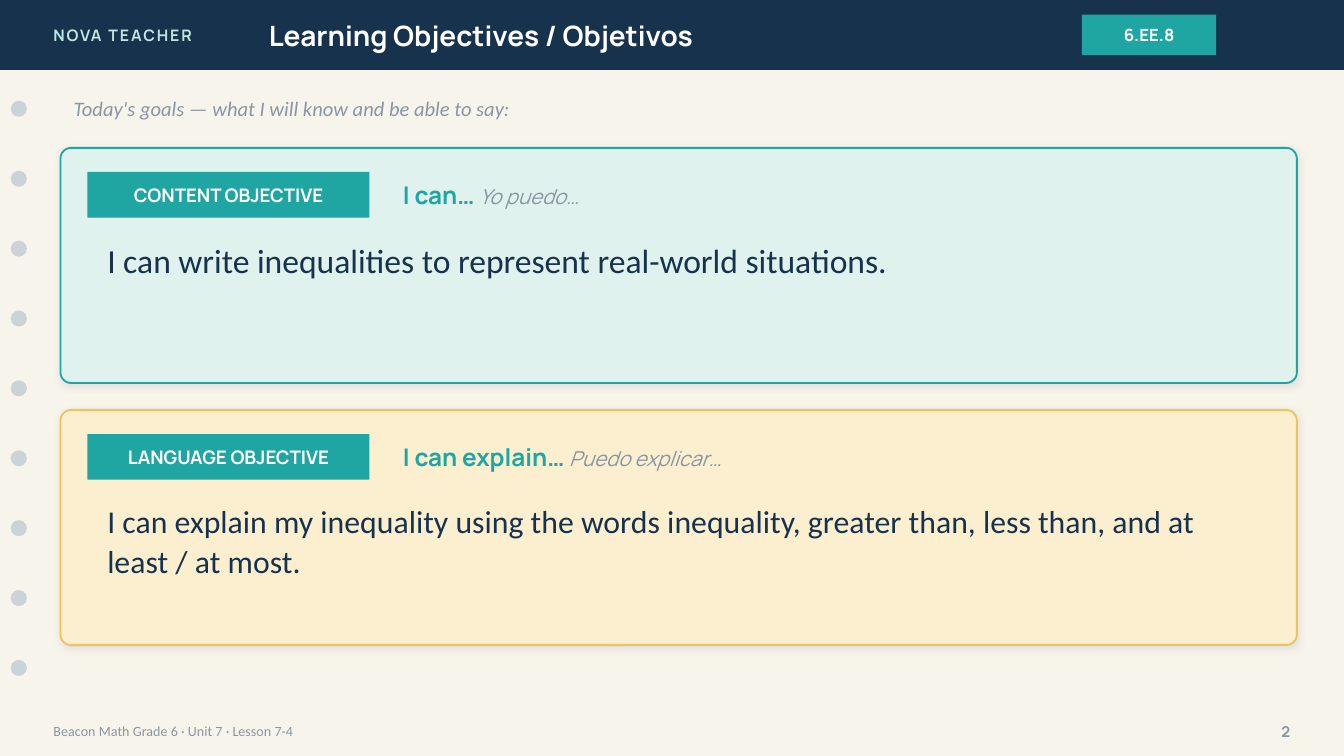
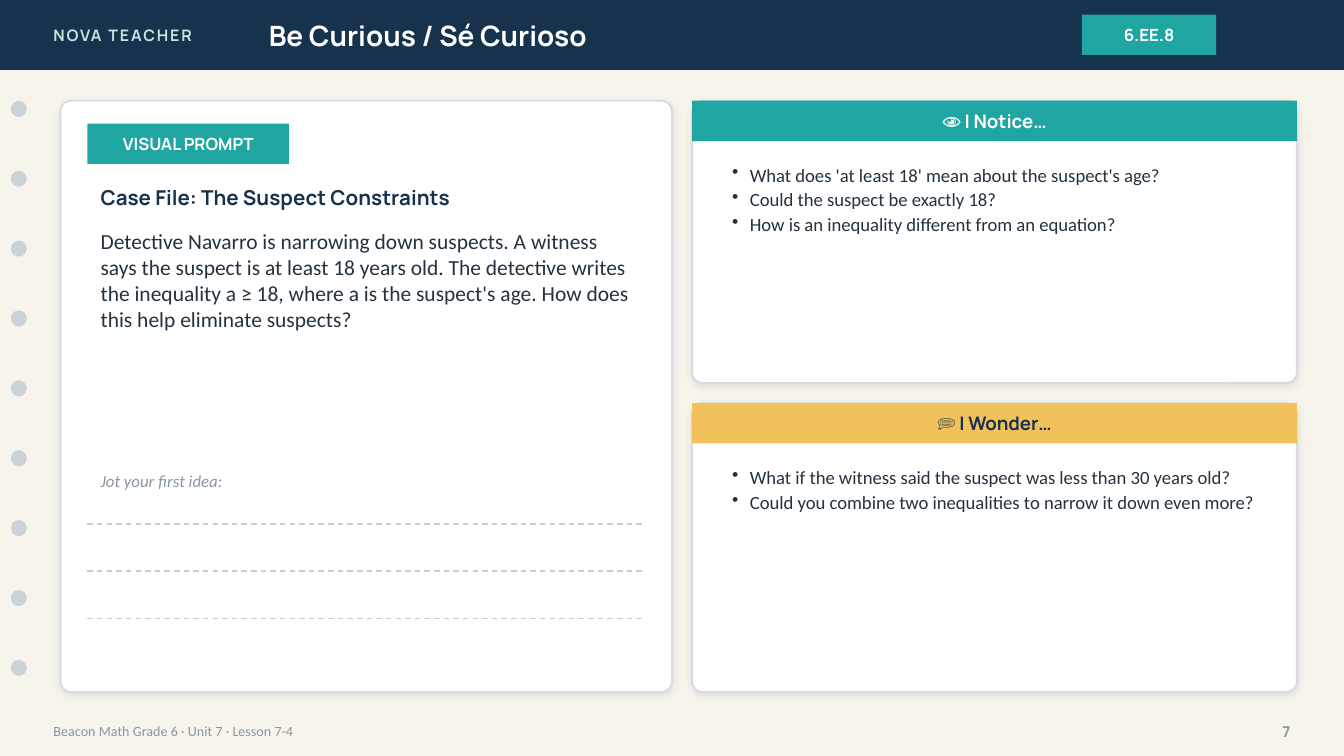
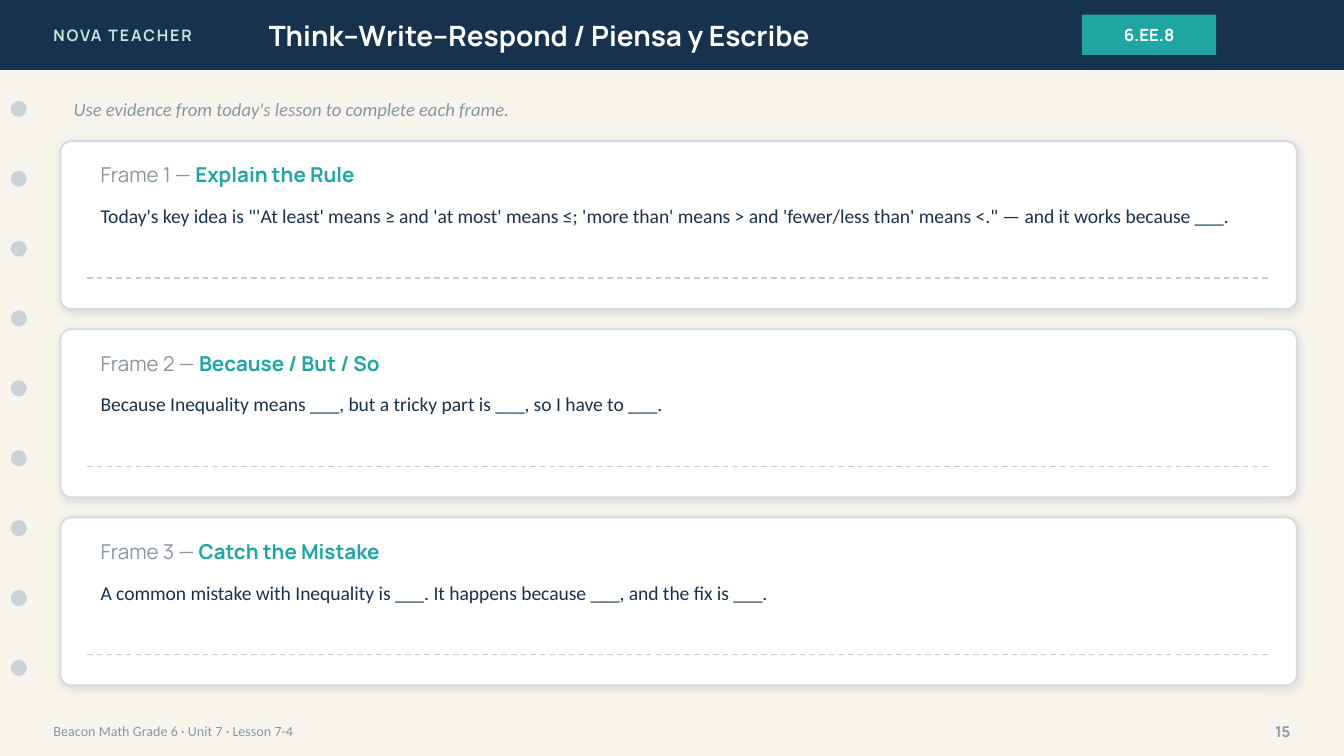
from lxml import etree
from pptx import Presentation
from pptx.dml.color import RGBColor
from pptx.enum.dml import MSO_LINE
from pptx.enum.shapes import MSO_CONNECTOR, MSO_SHAPE
from pptx.enum.text import MSO_ANCHOR, MSO_AUTO_SIZE, PP_ALIGN
from pptx.oxml.ns import qn
from pptx.util import Pt

RECT, ROUND, OVAL = MSO_SHAPE.RECTANGLE, MSO_SHAPE.ROUNDED_RECTANGLE, MSO_SHAPE.OVAL
LEFT, CENTER, RIGHT = PP_ALIGN.LEFT, PP_ALIGN.CENTER, PP_ALIGN.RIGHT
TOP, MIDDLE = MSO_ANCHOR.TOP, MSO_ANCHOR.MIDDLE
STRAIGHT, DASH, NO_FIT = MSO_CONNECTOR.STRAIGHT, MSO_LINE.DASH, MSO_AUTO_SIZE.NONE
HEAD, BODY = "Manrope", "Calibri"
COLORS = {
    "paper": "F7F4EC", "navy": "17324D", "teal": "1FA6A2", "mint": "BFE6E2",
    "white": "FFFFFF", "hole": "CBD3D9", "muted": "8A96A3", "ink": "24323F",
    "pale_teal": "DFF2EE", "pale_gold": "FBEFD0", "gold": "F2C15B",
    "border": "D6DBDF", "rule": "C7CDD2", "shadow": "1C2E42",
}
BAND_H = 37.44
EDGE, CARD_W = 32.4, 662.4
INNER = 46.8
RADIUS = 5.76


def rgb(name):
    return RGBColor.from_string(COLORS[name])


class Deck:
    """Holds the lesson style and the slide being built."""

    def __init__(self):
        self.prs = Presentation()
        self.prs.slide_width, self.prs.slide_height = Pt(720), Pt(405)
        fill = self.prs.slide_master.background.fill
        fill.solid()
        fill.fore_color.rgb = rgb("paper")

    def slide(self, title, number):
        self.s = self.prs.slides.add_slide(self.prs.slide_layouts[5])
        band = self.shape(RECT, 0, 0, 720, BAND_H, "navy")
        sp = self.s.shapes.title
        sp.element.addprevious(band.element)
        sp.left, sp.top, sp.width, sp.height = Pt(136.8), Pt(0), Pt(403.2), Pt(BAND_H)
        self.fill_text(sp.text_frame, title, 15, "white", bold=True)
        p = self.text(21.6, 0, 172.8, BAND_H, "NOVA TEACHER", 8.5, "mint", bold=True)
        p.runs[0].font._element.set("spc", "100")
        self.label(579.6, 7.92, 72, 21.6, "6.EE.8", 9)
        for i in range(9):
            self.shape(OVAL, 5.76, 54 + i * BAND_H, 8.64, 8.64, "hole")
        self.text(21.6, 381.6, 504, 20.16, "Beacon Math Grade 6 · Unit 7 · Lesson 7-4",
                  7.5, "muted", BODY)
        self.text(662.4, 381.6, 36, 20.16, str(number), 8, "muted", bold=True, align=RIGHT)

    def shape(self, kind, x, y, w, h, fill):
        sp = self.s.shapes.add_shape(kind, Pt(x), Pt(y), Pt(w), Pt(h))
        sp.shadow.inherit = False
        sp.fill.solid()
        sp.fill.fore_color.rgb = rgb(fill)
        sp.line.fill.background()
        return sp

    def card(self, x, y, w, h, fill="white", border="border"):
        sp = self.shape(ROUND, x, y, w, h, fill)
        sp.adjustments[0] = RADIUS / min(w, h)
        sp.line.color.rgb = rgb(border)
        sp.line.width = Pt(1)
        effects = sp._element.spPr.find(qn("a:effectLst"))
        shadow = etree.SubElement(effects, qn("a:outerShdw"), blurRad=str(Pt(4)),
                                  dist=str(Pt(1)), dir="5400000", rotWithShape="0")
        color = etree.SubElement(shadow, qn("a:srgbClr"), val=COLORS["shadow"])
        etree.SubElement(color, qn("a:alpha"), val="10000")

    def label(self, x, y, w, h, text, size, fill="teal", color="white"):
        sp = self.shape(RECT, x, y, w, h, fill)
        self.fill_text(sp.text_frame, text, size, color, bold=True, align=CENTER)

    def text(self, x, y, w, h, text, size, color, font=HEAD, **style):
        tf = self.s.shapes.add_textbox(Pt(x), Pt(y), Pt(w), Pt(h)).text_frame
        return self.fill_text(tf, text, size, color, font, **style)

    def fill_text(self, tf, text, size, color, font=HEAD, bold=False, italic=False,
                  align=LEFT, anchor=MIDDLE, spacing=None, bullets=False):
        tf.text = text
        tf.word_wrap, tf.auto_size, tf.vertical_anchor = True, NO_FIT, anchor
        for p in tf.paragraphs:
            p.alignment = align
            if bullets:
                pPr = p._p.get_or_add_pPr()
                pPr.set("marL", str(Pt(9.5)))
                pPr.set("indent", str(-Pt(9.5)))
                etree.SubElement(pPr, qn("a:buChar"), char="•")
            if spacing:
                p.line_spacing = spacing
            for r in p.runs:
                self.style_run(r, size, color, font, bold, italic)
        return tf.paragraphs[0]

    def more(self, p, text, size, color, bold=False, italic=False):
        r = p.add_run()
        r.text = text
        self.style_run(r, size, color, HEAD, bold, italic)

    def style_run(self, r, size, color, font, bold, italic):
        r.font.size, r.font.name = Pt(size), font
        r.font.bold, r.font.italic = bold, italic
        r.font.color.rgb = rgb(color)

    def intro(self, text, size):
        self.text(EDGE, 47.52, CARD_W, 21.6, text, size, "muted", BODY, italic=True)

    def writing_line(self, y, width):
        line = self.s.shapes.add_connector(STRAIGHT, Pt(INNER), Pt(y), Pt(INNER + width), Pt(y))
        line.line.color.rgb = rgb("rule")
        line.line.width = Pt(0.75)
        line.line.dash_style = DASH
        etree.SubElement(line._element.spPr, qn("a:effectLst"))

    def objective(self, y, fill, border, name, stem, spanish, goal, size):
        self.card(EDGE, y, CARD_W, 126, fill, border)
        self.label(INNER, y + 12.96, 151.2, 24.48, name, 10)
        p = self.text(208.8, y + 12.96, 475.2, 24.48, stem + " ", 13, "teal", bold=True)
        self.more(p, spanish, 11, "muted", italic=True)
        self.text(50.4, y + 44.64, 626.4, 72, goal, size, "navy", BODY, anchor=TOP, spacing=1.05)

    def questions(self, y, h, heading, fill, color, items):
        self.card(370.8, y, 324, h)
        self.label(370.8, y, 324, 21.6, heading, 10, fill, color)
        self.text(385.2, y + 28.8, 295.2, h - 36, "\n".join(items), 10, "ink", BODY,
                  anchor=TOP, spacing=1.1, bullets=True)

    def frame(self, y, number, name, sentence):
        self.card(EDGE, y, CARD_W, 90)
        p = self.text(INNER, y + 7.2, 633.6, 21.6, f"Frame {number} — ", 11, "muted")
        self.more(p, name, 11, "teal", bold=True)
        self.text(INNER, y + 30.24, 633.6, 28.8, sentence, 10.5, "navy", BODY, anchor=TOP)
        self.writing_line(y + 73.44, 633.6)


def objectives(deck):
    deck.slide("Learning Objectives / Objetivos", 2)
    deck.intro("Today's goals — what I will know and be able to say:", 11)
    deck.objective(79.2, "pale_teal", "teal", "CONTENT OBJECTIVE", "I can…", "Yo puedo…",
                   "I can write inequalities to represent real-world situations.", 18)
    deck.objective(219.6, "pale_gold", "gold", "LANGUAGE OBJECTIVE", "I can explain…",
                   "Puedo explicar…",
                   "I can explain my inequality using the words inequality, greater than, "
                   "less than, and at least / at most.", 17)


def be_curious(deck):
    deck.slide("Be Curious / Sé Curioso", 7)
    deck.card(EDGE, 54, 327.6, 316.8)
    deck.label(INNER, 66.24, 108, 21.6, "VISUAL PROMPT", 9)
    deck.text(INNER, 95.04, 298.8, 21.6, "Case File: The Suspect Constraints", 11, "navy",
              bold=True)
    deck.text(INNER, 118.8, 298.8, 122.4,
              "Detective Navarro is narrowing down suspects. A witness says the suspect is "
              "at least 18 years old. The detective writes the inequality a ≥ 18, where a is "
              "the suspect's age. How does this help eliminate suspects?",
              11.5, "ink", BODY, anchor=TOP)
    deck.text(INNER, 248.4, 288, 18, "Jot your first idea:", 9, "muted", BODY, italic=True)
    for i in range(3):
        deck.writing_line(280.8 + i * 25.2, 298.8)
    deck.questions(54, 151.2, "👁 I Notice…", "teal", "white", [
        "What does 'at least 18' mean about the suspect's age?",
        "Could the suspect be exactly 18?",
        "How is an inequality different from an equation?",
    ])
    deck.questions(216, 154.8, "💭 I Wonder…", "gold", "navy", [
        "What if the witness said the suspect was less than 30 years old?",
        "Could you combine two inequalities to narrow it down even more?",
    ])


def think_write_respond(deck):
    deck.slide("Think–Write–Respond / Piensa y Escribe", 15)
    deck.intro("Use evidence from today's lesson to complete each frame.", 10)
    frames = [
        ("Explain the Rule",
         "Today's key idea is \"'At least' means ≥ and 'at most' means ≤; 'more than' means > "
         "and 'fewer/less than' means <.\" — and it works because ___."),
        ("Because / But / So",
         "Because Inequality means ___, but a tricky part is ___, so I have to ___."),
        ("Catch the Mistake",
         "A common mistake with Inequality is ___. It happens because ___, and the fix is ___."),
    ]
    for i, (name, sentence) in enumerate(frames):
        deck.frame(75.6 + i * 100.8, i + 1, name, sentence)


def main():
    deck = Deck()
    objectives(deck)
    be_curious(deck)
    think_write_respond(deck)
    deck.prs.save("out.pptx")


if __name__ == "__main__":
    main()
